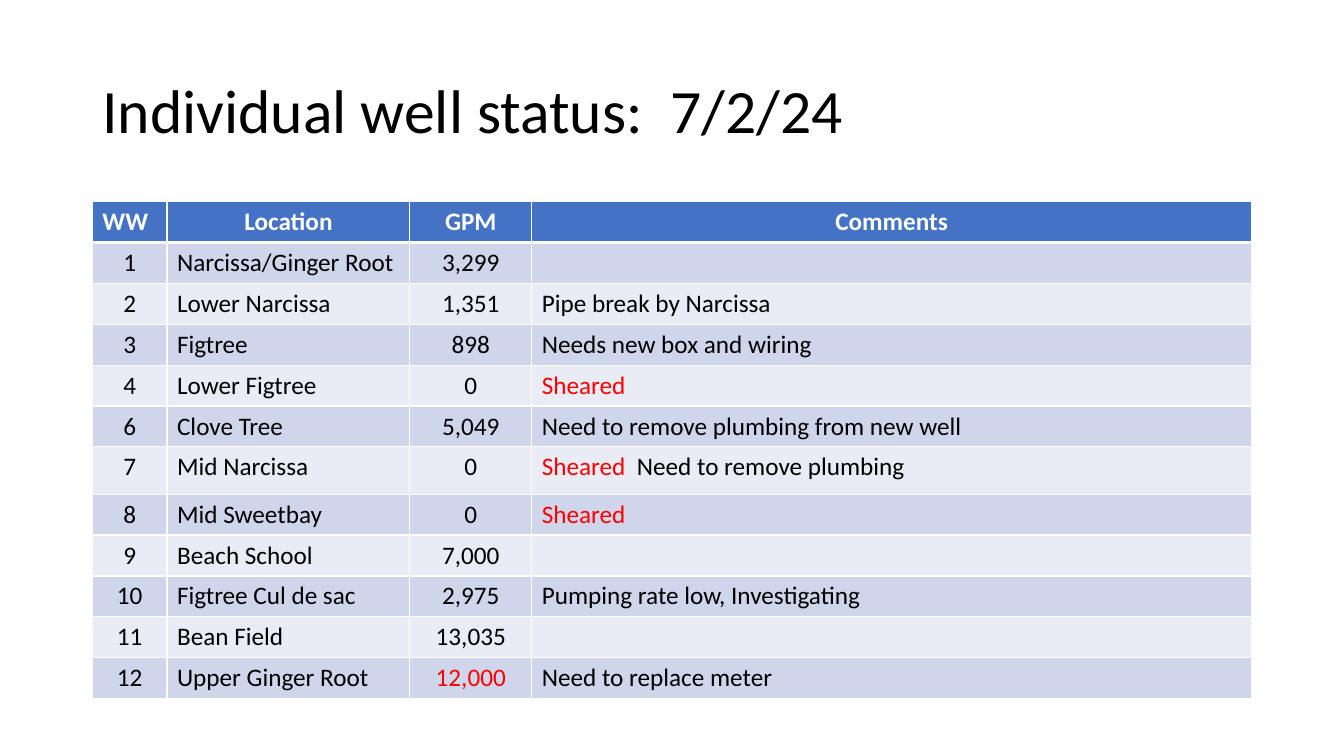
from dataclasses import dataclass

from lxml.etree import SubElement
from pptx import Presentation
from pptx.dml.color import RGBColor
from pptx.enum.text import MSO_ANCHOR as Anchor, MSO_AUTO_SIZE as AutoSize, PP_ALIGN as Align
from pptx.oxml.ns import qn
from pptx.util import Pt

FONT = "Calibri"
BLACK, WHITE, RED = "000000", "FFFFFF", "FF0000"
HEADER_FILL = "4472C4"
BAND_FILLS = ("CFD5EA", "E9EBF5")

LEFT, WIDTH = 66, 828
TABLE_TOP = 144
COLUMN_WIDTHS = (53.3, 173.5, 87.1, 514.1)
ROW_HEIGHT, TALL_ROW_HEIGHT = 29.2, 33.8
HEADINGS = ("WW", "Location", "GPM", "Comments")
HEADING_ALIGNS = (Align.LEFT, Align.CENTER, Align.CENTER, Align.CENTER)
BODY_ALIGNS = (Align.CENTER, Align.LEFT, Align.CENTER, Align.LEFT)


@dataclass
class Well:
    number: int
    location: str
    rate: str
    comment: str = ""
    alert: str = ""
    rate_color: str = BLACK
    height: float = ROW_HEIGHT


@dataclass
class Span:
    text: str
    color: str = BLACK
    bold: bool = False


WELLS = (
    Well(1, "Narcissa/Ginger Root", "3,299"),
    Well(2, "Lower Narcissa", "1,351", "Pipe break by Narcissa"),
    Well(3, "Figtree", "898", "Needs new box and wiring"),
    Well(4, "Lower Figtree", "0", alert="Sheared"),
    Well(6, "Clove Tree", "5,049", "Need to remove plumbing from new well"),
    Well(7, "Mid Narcissa", "0", "Need to remove plumbing", alert="Sheared  ",
         height=TALL_ROW_HEIGHT),
    Well(8, "Mid Sweetbay", "0", alert="Sheared"),
    Well(9, "Beach School", "7,000"),
    Well(10, "Figtree Cul de sac", "2,975", "Pumping rate low, Investigating"),
    Well(11, "Bean Field", "13,035"),
    Well(12, "Upper Ginger Root", "12,000", "Need to replace meter", rate_color=RED),
)


def rgb(color: str) -> RGBColor:
    return RGBColor.from_string(color)


def format_font(font, size: float, color: str, bold: bool = False) -> None:
    font.name, font.size, font.bold = FONT, Pt(size), bold
    font.color.rgb = rgb(color)


def set_borders(cell, bottom_width: float) -> None:
    """Draw white lines round a cell; its fill must already be set."""
    properties = cell.fill._xPr
    for index, side in enumerate(("L", "R", "T", "B")):
        line = SubElement(properties, qn(f"a:ln{side}"))
        line.set("w", str(Pt(bottom_width if side == "B" else 1)))
        SubElement(SubElement(line, qn("a:solidFill")), qn("a:srgbClr")).set("val", WHITE)
        properties.insert(index, line)


def fill_cell(cell, spans: list[Span], align: Align, fill: str, bottom_width: float = 1) -> None:
    cell.fill.solid()
    cell.fill.fore_color.rgb = rgb(fill)
    set_borders(cell, bottom_width)
    para = cell.text_frame.paragraphs[0]
    para.alignment = align
    for span in spans:
        if span.text:
            run = para.add_run()
            run.text = span.text
            format_font(run.font, 18, span.color, span.bold)


def well_spans(well: Well) -> list[list[Span]]:
    return [
        [Span(str(well.number))],
        [Span(well.location)],
        [Span(well.rate, well.rate_color)],
        [Span(well.alert, RED), Span(well.comment)],
    ]


def add_title(page) -> None:
    title = page.shapes.title
    title.left, title.top, title.width, title.height = Pt(LEFT), Pt(28.8), Pt(WIDTH), Pt(104.4)
    frame = title.text_frame
    frame.text = "Individual well status:  7/2/24"
    frame.vertical_anchor = Anchor.MIDDLE
    frame.auto_size = AutoSize.NONE
    frame.word_wrap = True
    para = frame.paragraphs[0]
    para.alignment = Align.LEFT
    para.line_spacing = 0.9
    format_font(para.runs[0].font, 44, BLACK)


def add_well_table(page) -> None:
    heights = [ROW_HEIGHT] + [well.height for well in WELLS]
    table = page.shapes.add_table(len(heights), len(HEADINGS), Pt(LEFT), Pt(TABLE_TOP),
                                  Pt(WIDTH), Pt(sum(heights))).table
    for column, width in zip(table.columns, COLUMN_WIDTHS):
        column.width = Pt(width)
    for row, height in zip(table.rows, heights):
        row.height = Pt(height)
    for column, (heading, align) in enumerate(zip(HEADINGS, HEADING_ALIGNS)):
        fill_cell(table.cell(0, column), [Span(heading, WHITE, True)], align, HEADER_FILL, 3)
    for index, well in enumerate(WELLS):
        for column, (spans, align) in enumerate(zip(well_spans(well), BODY_ALIGNS)):
            fill_cell(table.cell(index + 1, column), spans, align, BAND_FILLS[index % 2])


def main() -> None:
    deck = Presentation()
    deck.slide_width, deck.slide_height = Pt(960), Pt(540)
    page = deck.slides.add_slide(deck.slide_layouts.get_by_name("Title Only"))
    add_title(page)
    add_well_table(page)
    deck.save("out.pptx")


if __name__ == "__main__":
    main()
